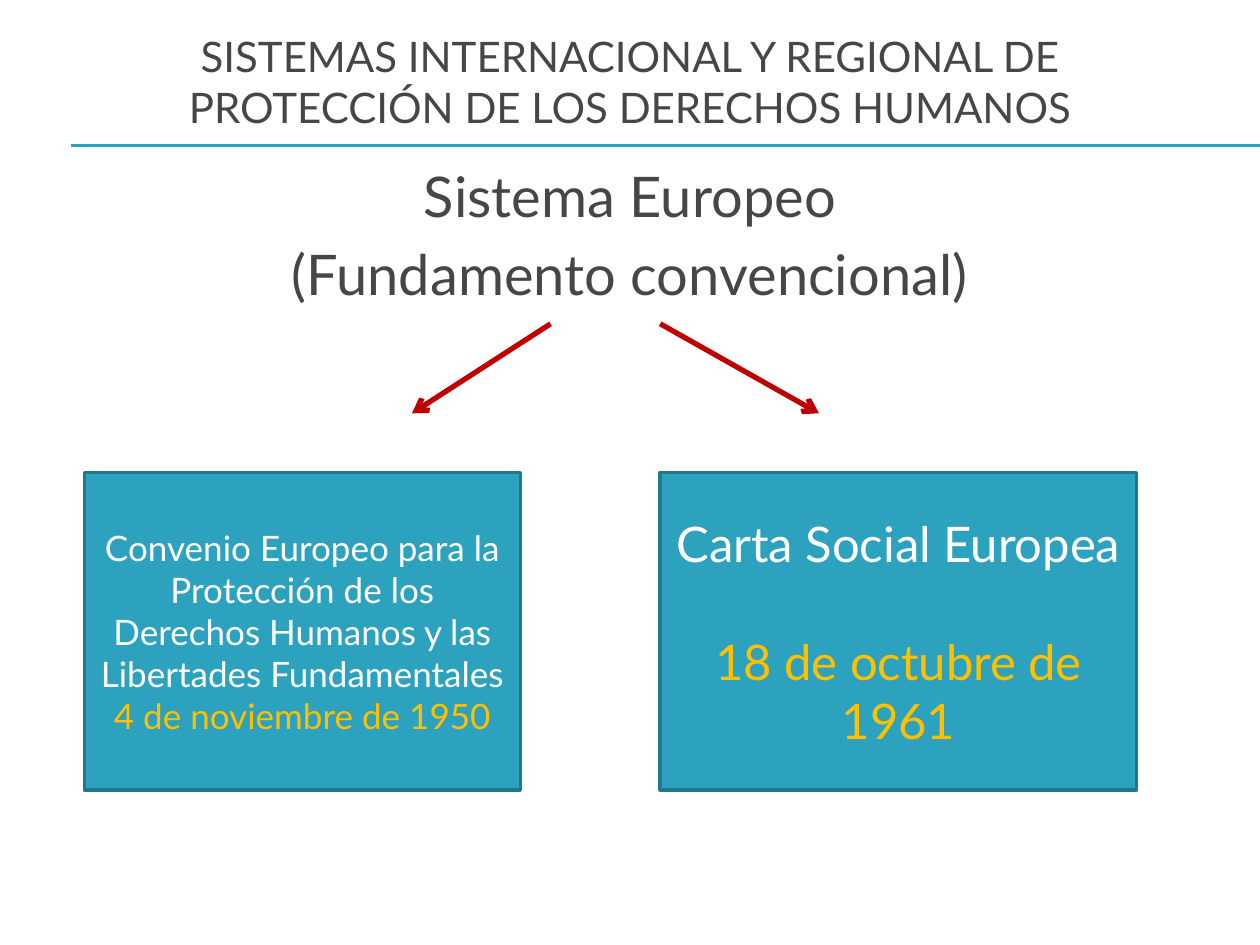
from lxml.etree import SubElement
from pptx import Presentation
from pptx.dml.color import RGBColor
from pptx.enum.shapes import MSO_CONNECTOR, MSO_SHAPE
from pptx.enum.text import MSO_ANCHOR, MSO_AUTO_SIZE, PP_ALIGN
from pptx.oxml.ns import qn
from pptx.util import Inches, Pt

TEAL, EDGE, RED = "2DA2BF", "21788D", "C00000"
GREY, WHITE, GOLD = "464646", "FFFFFF", "FFC000"


def paint(color, code):
    color.rgb = RGBColor.from_string(code)


def place(shape, box):
    shape.left, shape.top, shape.width, shape.height = map(Inches, box)


def write(shape, lines, size, anchor, before=0):
    """Fill the shape with centred (text, colour) paragraphs."""
    frame = shape.text_frame
    frame.text = "\n".join(text for text, _ in lines)
    frame.word_wrap = True
    frame.auto_size = MSO_AUTO_SIZE.NONE
    frame.vertical_anchor = anchor
    for par, (_, code) in zip(frame.paragraphs, lines):
        par.alignment = PP_ALIGN.CENTER
        par.space_before = Pt(before)
        for run in par.runs:
            run.font.name = "Lato"
            run.font.size = Pt(size)
            paint(run.font.color, code)


def add_line(slide, start, end, code, width, arrow=False):
    line = slide.shapes.add_connector(
        MSO_CONNECTOR.STRAIGHT, *map(Inches, start + end))
    paint(line.line.color, code)
    line.line.width = Pt(width)
    props = line._element.spPr
    if arrow:
        SubElement(props.find(qn("a:ln")), qn("a:tailEnd"), type="arrow")
    SubElement(props, qn("a:effectLst"))


def add_head(slide, box):
    title = slide.shapes.title
    place(title, box)
    text = "SISTEMAS INTERNACIONAL Y REGIONAL DE PROTECCIÓN DE LOS DERECHOS HUMANOS"
    write(title, [(text, GREY)], 24, MSO_ANCHOR.MIDDLE)
    left, top, _, height = box
    for gap in (0.16, 0.17):
        y = top + height + gap
        add_line(slide, (left + 0.06, y), (10, y), TEAL, 0.75)


def add_topic(slide, box):
    body = slide.placeholders[1]
    place(body, box)
    lines = [("Sistema Europeo", GREY), ("(Fundamento convencional)", GREY)]
    write(body, lines, 32, MSO_ANCHOR.TOP, 6.4)
    for par in body.text_frame.paragraphs:
        props = par._p.get_or_add_pPr()
        props.set("marL", "0")
        props.set("indent", "0")
        SubElement(props, qn("a:buNone"))


def add_card(slide, kind, box, name, date, size, gap=0):
    """Add a treaty box, with a gap in points above its date."""
    card = slide.shapes.add_shape(kind, *map(Inches, box))
    card.shadow.inherit = False
    card.fill.solid()
    paint(card.fill.fore_color, TEAL)
    paint(card.line.color, EDGE)
    card.line.width = Pt(2)
    write(card, [(name, WHITE), (date, GOLD)], size, MSO_ANCHOR.MIDDLE)
    card.text_frame.paragraphs[1].space_before = Pt(gap)


def main():
    deck = Presentation()
    deck.slide_width, deck.slide_height = Inches(10), Inches(7.5)
    slide = deck.slides.add_slide(deck.slide_layouts[1])
    add_head(slide, (0.5, 0.3, 9, 0.69))
    add_topic(slide, (0.5, 1.23, 9, 5.47))
    add_card(slide, MSO_SHAPE.FLOWCHART_PROCESS, (0.67, 3.75, 3.46, 2.52),
             "Convenio Europeo para la Protección de los Derechos Humanos "
             "y las Libertades Fundamentales", "4 de noviembre de 1950", 20)
    add_card(slide, MSO_SHAPE.RECTANGLE, (5.24, 3.75, 3.78, 2.52),
             "Carta Social Europea", "18 de octubre de 1961", 28, 33.6)
    for start, end in ((5.24, 6.5), (4.37, 3.27)):
        add_line(slide, (start, 2.57), (end, 3.28), RED, 3, arrow=True)
    deck.save("out.pptx")


if __name__ == "__main__":
    main()
